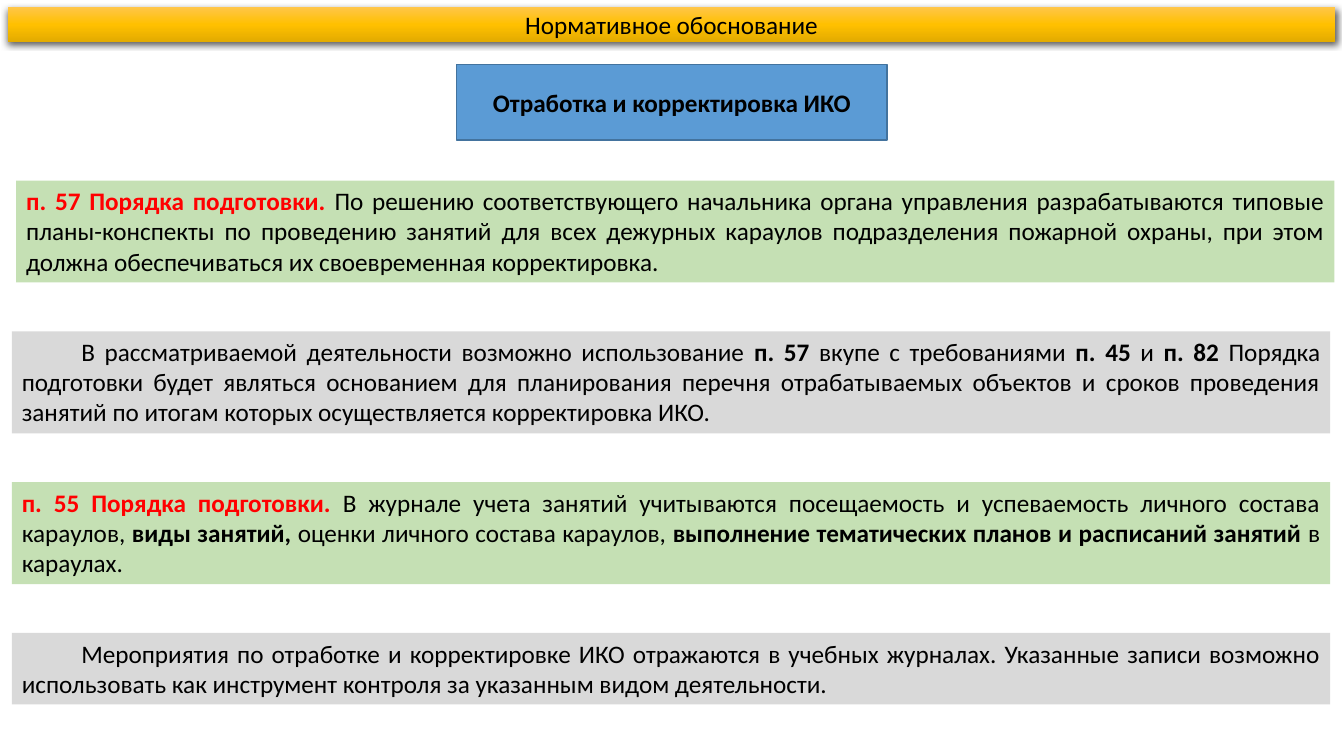
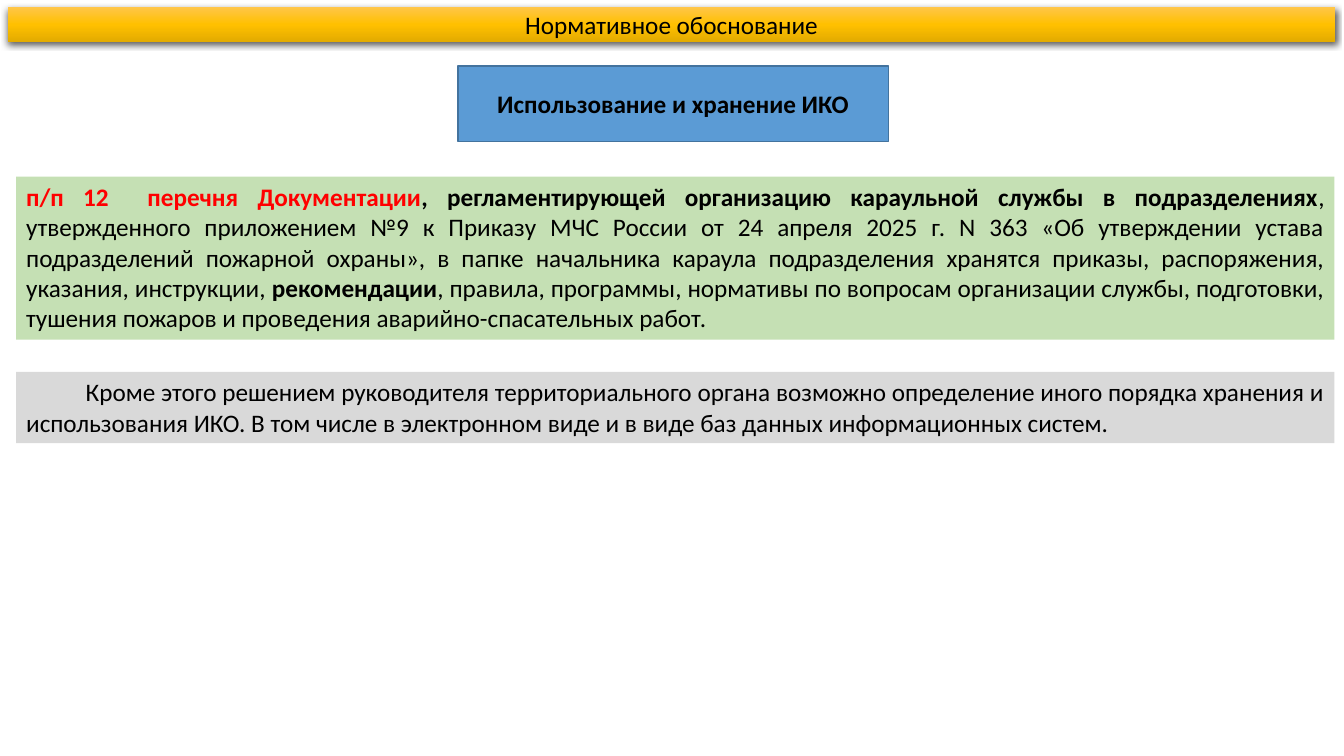
from lxml import etree
from pptx import Presentation
from pptx.dml.color import RGBColor
from pptx.enum.shapes import MSO_SHAPE
from pptx.enum.text import MSO_ANCHOR, MSO_AUTO_SIZE, PP_ALIGN
from pptx.oxml.ns import qn
from pptx.util import Cm, Pt

RECTANGLE = MSO_SHAPE.RECTANGLE
TOP, MIDDLE = MSO_ANCHOR.TOP, MSO_ANCHOR.MIDDLE
CENTER, JUSTIFY = PP_ALIGN.CENTER, PP_ALIGN.JUSTIFY
GROW = MSO_AUTO_SIZE.SHAPE_TO_FIT_TEXT

BLACK = RGBColor(0x00, 0x00, 0x00)
RED = RGBColor(0xFF, 0x00, 0x00)
BLUE = RGBColor(0x5B, 0x9B, 0xD5)
DARK_BLUE = RGBColor(0x43, 0x73, 0x9E)
GREEN = RGBColor(0xC5, 0xE0, 0xB4)
GRAY = RGBColor(0xD9, 0xD9, 0xD9)
GOLD_STOPS = (
    (0, RGBColor(0xFF, 0xC6, 0x4B)),
    (50, RGBColor(0xFF, 0xC0, 0x00)),
    (100, RGBColor(0xE3, 0xAB, 0x00)),
)

PLAIN = (BLACK, False)
BOLD = (BLACK, True)
CITATION = (RED, True)


class RegulationDeck:
    """Holds the deck style and draws elements on the current page."""

    font = "Calibri"
    size = Pt(18)
    panel_width = 33.22
    line_height = 0.77
    panel_padding = 0.26
    first_indent = Cm(1.5)

    def __init__(self):
        self.deck = Presentation()
        self.deck.slide_width = Cm(33.87)
        self.deck.slide_height = Cm(19.05)
        self.page = None

    def new_page(self, title):
        self.page = self.deck.slides.add_slide(self.deck.slide_layouts[6])
        self.title_band(title)

    def box(self, left, top, width, height, color=None):
        box = self.page.shapes.add_shape(
            RECTANGLE, Cm(left), Cm(top), Cm(width), Cm(height))
        if color is not None:
            box.fill.solid()
            box.fill.fore_color.rgb = color
        box.line.fill.background()
        box.shadow.inherit = False
        return box

    def add_text(self, box, spans, align, anchor):
        frame = box.text_frame
        frame.word_wrap = True
        frame.vertical_anchor = anchor
        para = frame.paragraphs[0]
        para.alignment = align
        for text, (color, bold) in spans:
            span = para.add_run()
            span.text = text
            span.font.name = self.font
            span.font.size = self.size
            span.font.bold = bold
            span.font.color.rgb = color
        return para

    def title_band(self, text):
        band = self.box(0.2, 0.17, 33.45, 0.89)
        self.gold_gradient(band)
        self.drop_shadow(band)
        self.add_text(band, [(text, PLAIN)], CENTER, MIDDLE)

    def gold_gradient(self, band):
        band.fill.gradient()
        band.fill.gradient_angle = 270
        stops = band._element.spPr.find(f".//{qn('a:gsLst')}")
        for stop in list(stops):
            stops.remove(stop)
        for percent, color in GOLD_STOPS:
            stop = etree.SubElement(stops, qn("a:gs"), pos=str(percent * 1000))
            etree.SubElement(stop, qn("a:srgbClr"), val=str(color))

    def drop_shadow(self, band):
        effects = band._element.spPr.find(qn("a:effectLst"))
        shadow = etree.SubElement(
            effects, qn("a:outerShdw"), blurRad=str(Pt(4.5)),
            dist=str(Pt(1.5)), dir="5400000", algn="ctr", rotWithShape="0")
        color = etree.SubElement(shadow, qn("a:srgbClr"), val=str(BLACK))
        etree.SubElement(color, qn("a:alpha"), val="63000")

    def topic(self, left, top, text):
        box = self.box(left, top, 10.85, 1.9, BLUE)
        box.line.color.rgb = DARK_BLUE
        box.line.width = Pt(1)
        self.add_text(box, [(text, BOLD)], CENTER, MIDDLE)

    def panel(self, left, top, lines, color, spans):
        height = lines * self.line_height + self.panel_padding
        box = self.box(left, top, self.panel_width, height, color)
        box.text_frame.auto_size = GROW
        return self.add_text(box, spans, JUSTIFY, TOP)

    def rule(self, left, top, lines, spans):
        self.panel(left, top, lines, GREEN, spans)

    def comment(self, left, top, lines, spans):
        para = self.panel(left, top, lines, GRAY, spans)
        para._p.get_or_add_pPr().set("indent", str(self.first_indent))

    def save(self):
        self.deck.save("out.pptx")


TITLE = "Нормативное обоснование"

RULE_57 = [
    ("п. 57 Порядка подготовки. ", CITATION),
    ("По решению соответствующего начальника органа управления "
     "разрабатываются типовые планы-конспекты по проведению занятий для всех "
     "дежурных караулов подразделения пожарной охраны, при этом должна "
     "обеспечиваться их своевременная корректировка.", PLAIN),
]
PLANNING = [
    ("В рассматриваемой деятельности возможно использование ", PLAIN),
    ("п. 57 ", BOLD),
    ("вкупе с требованиями ", PLAIN),
    ("п. 45 ", BOLD),
    ("и ", PLAIN),
    ("п. 82 ", BOLD),
    ("Порядка подготовки будет являться основанием для планирования перечня "
     "отрабатываемых объектов и сроков проведения занятий по итогам которых "
     "осуществляется корректировка ИКО.", PLAIN),
]
RULE_55 = [
    ("п. 55 Порядка подготовки. ", CITATION),
    ("В журнале учета занятий учитываются посещаемость и успеваемость "
     "личного состава караулов, ", PLAIN),
    ("виды занятий, ", BOLD),
    ("оценки личного состава караулов, ", PLAIN),
    ("выполнение тематических планов и расписаний занятий ", BOLD),
    ("в караулах.", PLAIN),
]
JOURNALS = [
    ("Мероприятия по отработке и корректировке ИКО отражаются в учебных "
     "журналах. Указанные записи возможно использовать как инструмент "
     "контроля за указанным видом деятельности.", PLAIN),
]
RULE_12 = [
    ("п/п 12  перечня Документации", CITATION),
    (", регламентирующей организацию караульной службы в подразделениях", BOLD),
    (", утвержденного приложением №9 к Приказу МЧС России от 24 апреля "
     "2025 г. N 363 «Об утверждении устава подразделений пожарной охраны», "
     "в папке начальника караула подразделения хранятся приказы, "
     "распоряжения, указания, инструкции, ", PLAIN),
    ("рекомендации", BOLD),
    (", правила, программы, нормативы по вопросам организации службы, "
     "подготовки, тушения пожаров и проведения аварийно-спасательных работ.",
     PLAIN),
]
STORAGE = [
    ("Кроме этого решением руководителя территориального органа возможно "
     "определение иного порядка хранения и использования ИКО. В том числе в "
     "электронном виде и в виде баз данных информационных систем.", PLAIN),
]


def main():
    deck = RegulationDeck()

    deck.new_page(TITLE)
    deck.topic(11.51, 1.63, "Отработка и корректировка ИКО")
    first_top, pitch = 4.55, 3.8
    deck.rule(0.41, first_top, 3, RULE_57)
    deck.comment(0.3, first_top + pitch, 3, PLANNING)
    deck.rule(0.3, first_top + 2 * pitch, 3, RULE_55)
    deck.comment(0.3, first_top + 3 * pitch, 2, JOURNALS)

    deck.new_page(TITLE)
    deck.topic(11.54, 1.66, "Использование и хранение ИКО")
    deck.rule(0.41, 4.45, 5, RULE_12)
    deck.comment(0.41, 9.37, 2, STORAGE)

    deck.save()


if __name__ == "__main__":
    main()
